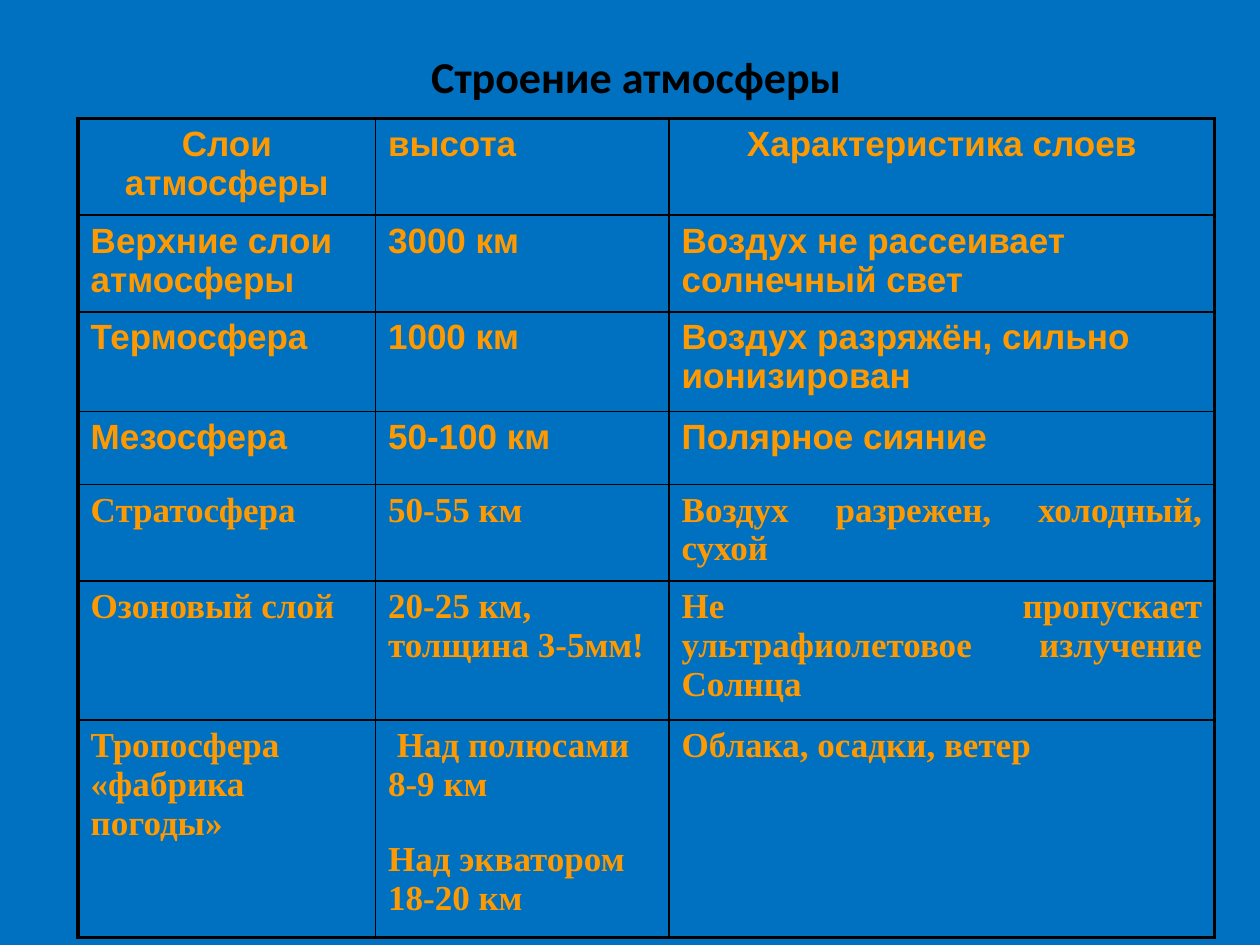
from lxml.etree import SubElement
from pptx import Presentation
from pptx.dml.color import RGBColor
from pptx.enum.text import MSO_ANCHOR, PP_ALIGN
from pptx.oxml.ns import qn
from pptx.util import Inches, Pt

BLUE = RGBColor(0x00, 0x70, 0xC0)
BLACK = RGBColor(0x00, 0x00, 0x00)
GOLD = RGBColor(0xFF, 0x99, 0x00)

deck = Presentation()
deck.slide_width, deck.slide_height = Inches(10), Inches(7.5)
col = deck.slide_width / 100
row = deck.slide_height / 75

slide = deck.slides.add_slide(deck.slide_layouts[6])
slide.background.fill.solid()
slide.background.fill.fore_color.rgb = BLUE


def style(para, face, size, color, align):
    para.font.name = face
    para.font.size = Pt(size)
    para.font.bold = True
    para.font.color.rgb = color
    para.alignment = align


def edge(cell, side, width):
    line = SubElement(cell._tc.get_or_add_tcPr(), qn("a:" + side), w=str(Pt(width)))
    fill = SubElement(line, qn("a:solidFill"))
    SubElement(fill, qn("a:srgbClr"), val=str(BLACK))


title = slide.shapes.add_textbox(
    int(5.5 * col), int(3.8 * row), int(90 * col), int(4.5 * row)
).text_frame
title.word_wrap = True
title.vertical_anchor = MSO_ANCHOR.MIDDLE
title.text = "Строение атмосферы"
style(title.paragraphs[0], "Calibri", 25.2, BLACK, PP_ALIGN.CENTER)

data = [
    ("Слои атмосферы", "высота", "Характеристика слоев"),
    ("Верхние слои атмосферы", "3000 км", "Воздух не рассеивает солнечный свет"),
    ("Термосфера", "1000 км", "Воздух разряжён, сильно ионизирован"),
    ("Мезосфера", "50-100 км", "Полярное сияние"),
    ("Стратосфера", "50-55 км", "Воздух разрежен, холодный, сухой"),
    ("Озоновый слой", "20-25 км, толщина 3-5мм!",
     "Не пропускает ультрафиолетовое излучение Солнца"),
    ("Тропосфера «фабрика погоды»",
     " Над полюсами 8-9 км\nНад экватором 18-20 км", "Облака, осадки, ветер"),
]
wide = [23.6, 23.3, 43.3]
high = [7.4, 7.6, 7.9, 5.8, 7.1, 10.6, 16.4]
last_r, last_c = len(high) - 1, len(wide) - 1

frame = slide.shapes.add_table(
    len(high), len(wide), int(6.2 * col), int(9.4 * row),
    int(sum(wide) * col), int(sum(high) * row)
)
table = frame.table
table.first_row = table.horz_banding = False
for c, width in enumerate(wide):
    table.columns[c].width = int(width * col)

for r, texts in enumerate(data):
    table.rows[r].height = int(high[r] * row)
    face = "Arial" if r < 4 else "Times New Roman"
    for c, text in enumerate(texts):
        cell = table.cell(r, c)
        cell.text = text
        if r == 0 and c != 1:
            align = PP_ALIGN.CENTER
        elif r > 3 and c != 1:
            align = PP_ALIGN.JUSTIFY
        else:
            align = PP_ALIGN.LEFT
        for n, para in enumerate(cell.text_frame.paragraphs):
            style(para, face, 20, GOLD, align)
            if n:
                para.space_before = Pt(21)
        sides = {"lnL": c == 0, "lnR": c == last_c, "lnT": r == 0, "lnB": r == last_r}
        for side, outer in sides.items():
            edge(cell, side, 2.25 if outer else 1)
        cell.fill.background()

deck.save("out.pptx")
